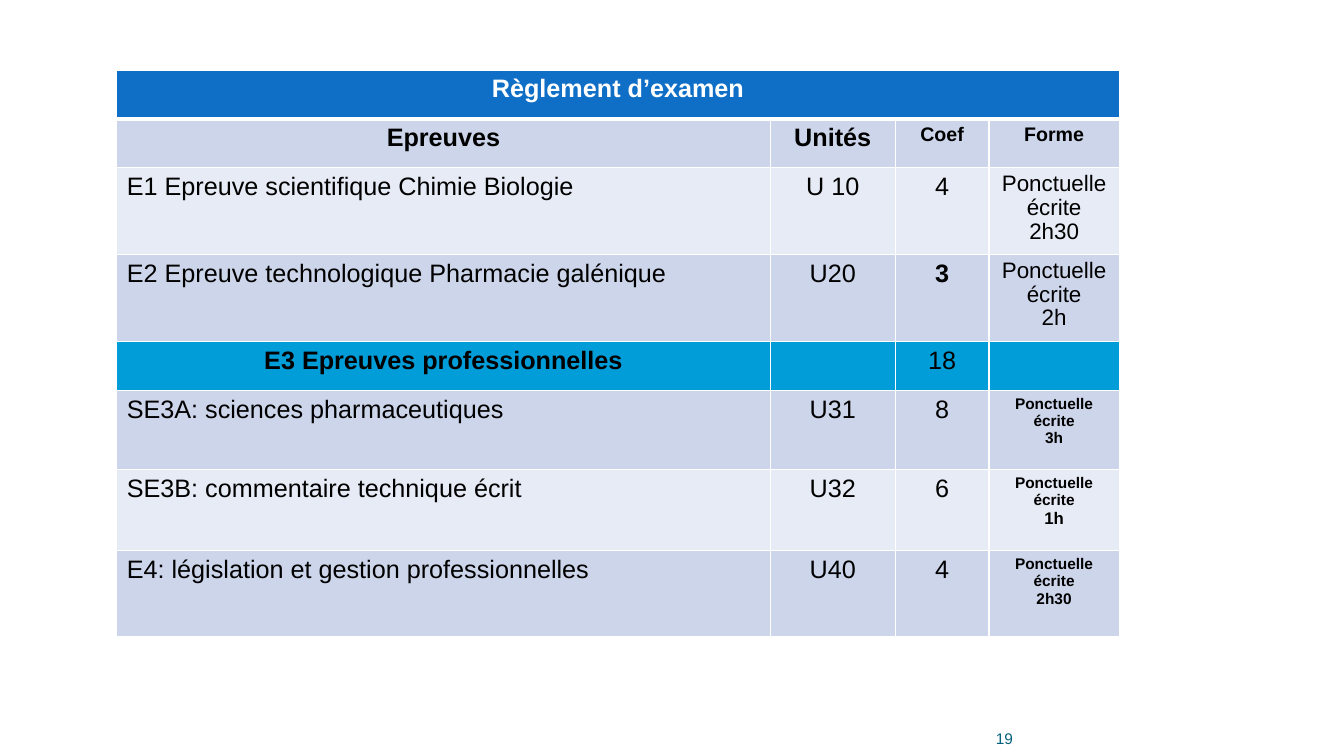
from lxml.etree import SubElement
from pptx import Presentation
from pptx.dml.color import RGBColor
from pptx.enum.text import MSO_ANCHOR, PP_ALIGN
from pptx.oxml.ns import qn
from pptx.util import Pt

WHITE, BLACK = "FFFFFF", "000000"
TITLE_BLUE, SECTION_BLUE = "0F6FC6", "009DD9"
DARK_BAND, LIGHT_BAND = "CCD5EA", "E7EBF5"
PAGE_NUMBER_TEAL = "04617B"
COLUMN_WIDTHS = [466.8, 89.3, 67, 93]
ROW_HEIGHTS = [34.9, 35, 61, 61, 35, 56.8, 58, 61.2]
ROW_FILLS = [TITLE_BLUE, DARK_BAND, LIGHT_BAND, DARK_BAND, SECTION_BLUE,
             DARK_BAND, LIGHT_BAND, DARK_BAND]


def color(value):
    return RGBColor.from_string(value)


class ExamSlide:
    """Holds the style and the current slide of the exam rules."""

    font = "Arial"

    def __init__(self, deck):
        self.page = deck.slides.add_slide(deck.slide_layouts[6])

    def add_lines(self, frame, lines, align, ink=BLACK, spacing=1.0):
        for index, (text, size, bold) in enumerate(lines):
            para = frame.paragraphs[0] if index == 0 else frame.add_paragraph()
            para.alignment = align
            para.line_spacing = spacing
            span = para.add_run()
            span.text = text
            span.font.name = self.font
            span.font.size = Pt(size)
            span.font.bold = bold
            span.font.color.rgb = color(ink)

    def add_text(self, left, top, width, height, lines, align, ink):
        box = self.page.shapes.add_textbox(Pt(left), Pt(top), Pt(width), Pt(height))
        frame = box.text_frame
        frame.word_wrap = True
        frame.vertical_anchor = MSO_ANCHOR.BOTTOM
        frame.margin_left = frame.margin_right = 0
        frame.margin_top = frame.margin_bottom = 0
        self.add_lines(frame, lines, align, ink)

    def add_grid(self, left, top, widths, heights):
        frame = self.page.shapes.add_table(len(heights), len(widths), Pt(left), Pt(top),
                                           Pt(sum(widths)), Pt(sum(heights)))
        grid = frame.table
        for column, width in zip(grid.columns, widths):
            column.width = Pt(width)
        for row, height in zip(grid.rows, heights):
            row.height = Pt(height)
        return grid

    def style_cell(self, cell, fill, top_line=1, bottom_line=1):
        properties = cell._tc.get_or_add_tcPr()
        sides = {"a:lnL": 1, "a:lnR": 1, "a:lnT": top_line, "a:lnB": bottom_line}
        for side, width in sides.items():
            line = SubElement(properties, qn(side), w=str(int(Pt(width))))
            paint = SubElement(line, qn("a:solidFill"))
            SubElement(paint, qn("a:srgbClr"), val=WHITE)
        cell.fill.solid()
        cell.fill.fore_color.rgb = color(fill)


def written(duration, size, bold, last_size=None):
    return [("Ponctuelle écrite", size, bold), (duration, last_size or size, bold)]


def plain(text, bold=False, size=18):
    return [(text, size, bold)]


def main():
    deck = Presentation()
    deck.slide_width, deck.slide_height = Pt(960), Pt(540)
    slide = ExamSlide(deck)
    slide.add_text(656.6, 516.2, 67, 18, plain("19", size=11), PP_ALIGN.RIGHT,
                   PAGE_NUMBER_TEAL)

    rows = [
        [plain("Règlement d’examen", True), [], [], []],
        [plain("Epreuves", True), plain("Unités", True),
         plain("Coef", True, 14), plain("Forme", True, 14)],
        [plain("E1 Epreuve scientifique Chimie Biologie"), plain("U 10"),
         plain("4"), written("2h30", 16, False)],
        [plain("E2 Epreuve technologique Pharmacie galénique"), plain("U20"),
         plain("3", True), written("2h", 16, False)],
        [plain("E3 Epreuves professionnelles", True), [], plain("18"), []],
        [plain("SE3A: sciences pharmaceutiques"), plain("U31"),
         plain("8"), written("3h", 11, True)],
        [plain("SE3B: commentaire technique écrit"), plain("U32"),
         plain("6"), written("1h", 11, True, 12)],
        [plain("E4: législation et gestion professionnelles"), plain("U40"),
         plain("4"), written("2h30", 11, True)],
    ]
    centred_rows = {0, 1, 4}
    grid = slide.add_grid(83.4, 50, COLUMN_WIDTHS, ROW_HEIGHTS)
    grid.cell(0, 0).merge(grid.cell(0, 3))
    for row, (contents, fill) in enumerate(zip(rows, ROW_FILLS)):
        for column, lines in enumerate(contents):
            cell = grid.cell(row, column)
            slide.style_cell(cell, fill, 3 if row == 1 else 1, 3 if row == 0 else 1)
            centred = column > 0 or row in centred_rows
            align = PP_ALIGN.CENTER if centred else PP_ALIGN.LEFT
            spacing = 0.95 if lines and lines[0][1] == 16 else 1.0
            ink = WHITE if row == 0 else BLACK
            slide.add_lines(cell.text_frame, lines, align, ink, spacing)

    deck.save("out.pptx")


if __name__ == "__main__":
    main()
